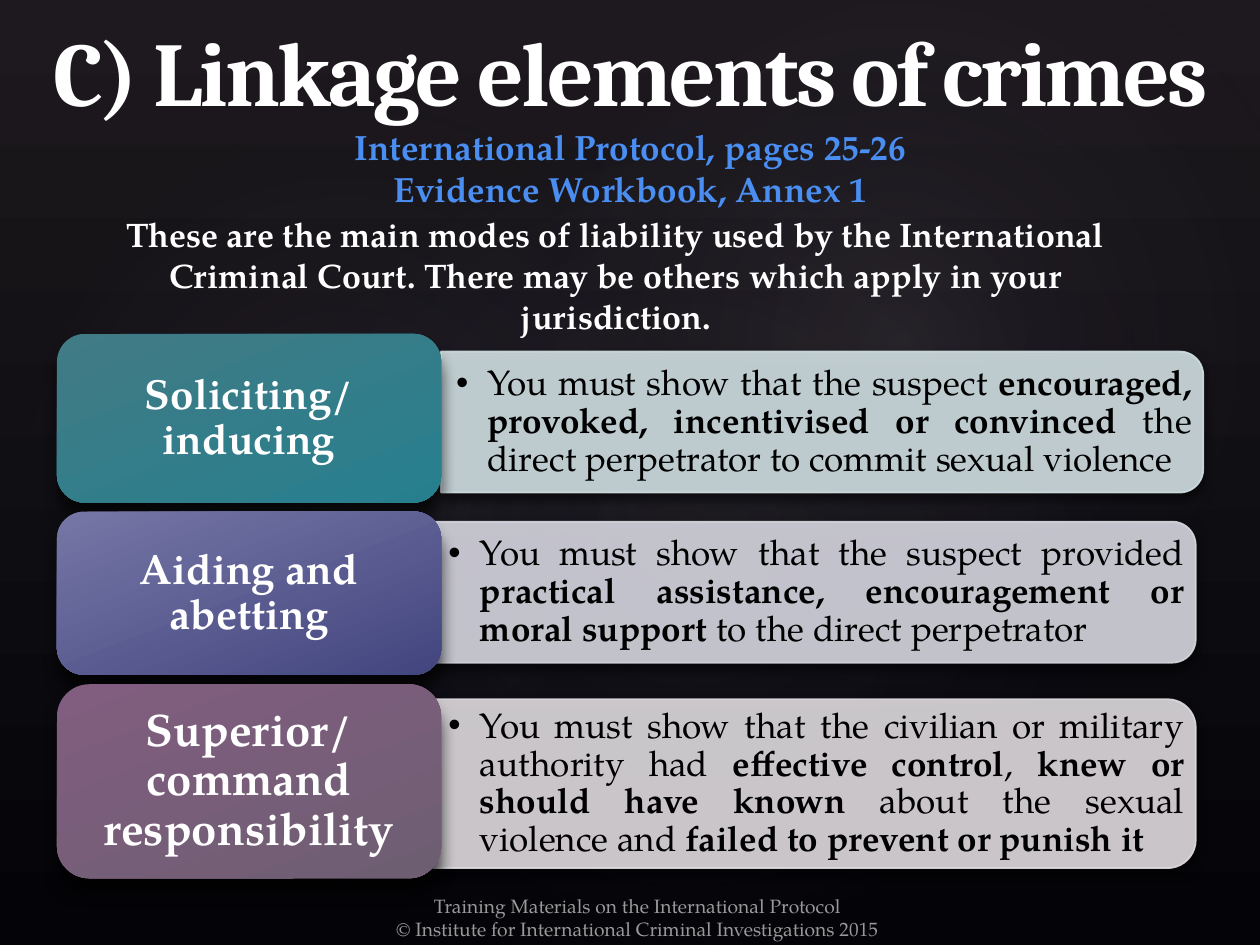
from math import cos, pi, sin

from lxml.etree import SubElement
from pptx import Presentation
from pptx.dml.color import RGBColor
from pptx.enum.shapes import MSO_SHAPE
from pptx.enum.text import MSO_ANCHOR, PP_ALIGN
from pptx.oxml.ns import qn
from pptx.util import Pt

OVAL, ROUNDED = MSO_SHAPE.OVAL, MSO_SHAPE.ROUNDED_RECTANGLE
CENTER, JUSTIFY = PP_ALIGN.CENTER, PP_ALIGN.JUSTIFY
MIDDLE, BOTTOM = MSO_ANCHOR.MIDDLE, MSO_ANCHOR.BOTTOM
BODY_FONT, TITLE_FONT = "TeX Gyre Pagella", "Cambria"
rgb = RGBColor.from_string


def add_run(p, text, size, color, bold=False, font=BODY_FONT):
    r = p.add_run()
    r.text = text
    r.font.size, r.font.bold, r.font.name = Pt(size), bold, font
    r.font.color.rgb = rgb(color)
    return r


def add_shadow(sp, blur, dist, alpha):
    sp.shadow.inherit = False
    effects = sp._element.spPr.find(qn("a:effectLst"))
    shadow = SubElement(effects, qn("a:outerShdw"), blurRad=str(Pt(blur)),
                        dist=str(Pt(dist)), dir="5400000", rotWithShape="0")
    color = SubElement(shadow, qn("a:srgbClr"), val="000000")
    SubElement(color, qn("a:alpha"), val=str(alpha * 1000))


prs = Presentation()
prs.slide_width, prs.slide_height = Pt(720), Pt(540)
s = prs.slides.add_slide(prs.slide_layouts[6])

# Background gradient
bg = s.background.fill
bg.gradient()
bg.gradient_angle = 270
for stop, color in zip(bg.gradient_stops, ("1D191E", "040408")):
    stop.color.rgb = rgb(color)

# Faint background glows
for x, y, w, h, angle, alpha in [(108, 82, 570, 449, 328.7, 7),
                                 (-21.6, 92, 436, 353, 294.3, 8),
                                 (258, 9.4, 510, 374, 328.7, 8)]:
    sp = s.shapes.add_shape(OVAL, Pt(x), Pt(y), Pt(w), Pt(h))
    sp.rotation = angle
    sp.shadow.inherit = False
    sp.line.fill.background()
    sp.fill.gradient()
    stops = sp.fill.gradient_stops
    stops[1].position = 0.58
    for stop, color in zip(stops, ("C4BCC6", "242852")):
        stop.color.rgb = rgb(color)
    grad = sp._element.spPr.find(qn("a:gradFill"))
    for color, opacity in zip(grad.iter(qn("a:srgbClr")), (alpha, 0)):
        SubElement(color, qn("a:alpha"), val=str(opacity * 1000))
    grad.remove(grad.find(qn("a:lin")))
    radial = SubElement(grad, qn("a:path"))
    radial.set("path", "circle")
    SubElement(radial, qn("a:fillToRect"), l="50000", t="50000", r="50000", b="50000")

# Introductory sentence
sp = s.shapes.add_textbox(Pt(32.4), Pt(111.6), Pt(639.4), Pt(82.8))
tf = sp.text_frame
tf.word_wrap, tf.vertical_anchor = True, MIDDLE
tf.margin_left = tf.margin_right = Pt(14)
tf.margin_top, tf.margin_bottom = Pt(8), 0
p = tf.paragraphs[0]
p.alignment = CENTER
add_run(p, "These are the main modes of liability used by the International Criminal "
           "Court. There may be others which apply in your jurisdiction.",
        19.4, "FFFFFF", True)

# Footer
sp = s.shapes.add_textbox(Pt(184.3), Pt(507.6), Pt(360), Pt(28.8))
tf = sp.text_frame
tf.word_wrap = True
tf.text = ("Training Materials on the International Protocol\n"
           "© Institute for International Criminal Investigations 2015")
for p in tf.paragraphs:
    p.alignment = CENTER
    font = p.runs[0].font
    font.size, font.name = Pt(11), BODY_FONT
    font.color.rgb = rgb("999999")

# Rows: label, its size, top, height and gradient;
# panel left, top, height and colour; text with every second piece bold
rows = [
    ("Soliciting/ inducing", 24, 190.8, 96.5, ("417B85", "277F8E"),
     252, 200.9, 80.6, "D2E0E3",
     ["You must show that the suspect ",
      "encouraged, provoked, incentivised or convinced",
      " the direct perpetrator to commit sexual violence"]),
    ("Aiding and abetting", 24, 292.3, 93.3, ("7677A6", "43457F"),
     247.7, 298.1, 80.6, "D7D7E1",
     ["You must show that the suspect provided ",
      "practical assistance, encouragement or moral support",
      " to the direct perpetrator"]),
    ("Superior/ command responsibility", 26, 391, 110.9, ("815D7F", "6E5E72"),
     247.7, 399.6, 96.5, "DFDBDF",
     ["You must show that the civilian or military authority had ",
      "effective control", ", ", "knew or should have known",
      " about the sexual violence and ", "failed to prevent or punish it"]),
]
LABEL_X, LABEL_W, PANEL_W, STEPS = 32.5, 219.6, 435.6, 10

for label, size, y, h, colors, px, py, ph, panel_color, pieces in rows:
    # Panel with rounded right corners
    radius = ph / 6
    right, bottom = px + PANEL_W, py + ph
    points = []
    for cy, start in ((py + radius, -pi / 2), (bottom - radius, 0)):
        for i in range(STEPS + 1):
            a = start + i * pi / 2 / STEPS
            points.append((Pt(right - radius + radius * cos(a)),
                           Pt(cy + radius * sin(a))))
    points.append((Pt(px), Pt(bottom)))
    outline = s.shapes.build_freeform(Pt(px), Pt(py))
    outline.add_line_segments(points, close=True)
    sp = outline.convert_to_shape()
    for fill in (sp.fill, sp.line.fill):
        fill.solid()
        fill.fore_color.rgb = rgb(panel_color)
    sp.line.width = Pt(1)
    for color in sp._element.spPr.iter(qn("a:srgbClr")):
        SubElement(color, qn("a:alpha"), val="90000")
    add_shadow(sp, 6, 3, 60)

    # Bulleted text
    tf = sp.text_frame
    tf.word_wrap, tf.vertical_anchor = True, MIDDLE
    tf.margin_left, tf.margin_right = Pt(8.6), Pt(6.5)
    tf.margin_top = tf.margin_bottom = Pt(0)
    p = tf.paragraphs[0]
    p.alignment, p.line_spacing = JUSTIFY, 0.9
    for i, piece in enumerate(pieces):
        add_run(p, piece, 20, "000000", i % 2 == 1)
    pPr = p._p.get_or_add_pPr()
    pPr.set("marL", str(Pt(18)))
    pPr.set("indent", str(-Pt(18)))
    SubElement(pPr, qn("a:buFont"), typeface="Arial")
    SubElement(pPr, qn("a:buChar"), char="•")

    # Label
    sp = s.shapes.add_shape(ROUNDED, Pt(LABEL_X), Pt(y), Pt(LABEL_W), Pt(h))
    sp.line.fill.background()
    sp.fill.gradient()
    sp.fill.gradient_angle = 291
    for stop, color in zip(sp.fill.gradient_stops, colors):
        stop.color.rgb = rgb(color)
    add_shadow(sp, 9, 9, 70)
    tf = sp.text_frame
    tf.word_wrap, tf.vertical_anchor = True, MIDDLE
    tf.margin_left = tf.margin_right = Pt(8)
    p = tf.paragraphs[0]
    p.alignment, p.line_spacing = CENTER, 0.9
    add_run(p, label, size, "FFFFFF", True)

# Title and references
sp = s.shapes.add_textbox(Pt(14.4), Pt(20.9), Pt(691.9), Pt(102.2))
tf = sp.text_frame
tf.word_wrap, tf.vertical_anchor = True, BOTTOM
p = tf.paragraphs[0]
p.alignment = CENTER
r = add_run(p, "C) Linkage elements of crimes", 52, "FFFFFF", True, TITLE_FONT)
r.font._element.set("spc", "-150")
for line in ("International Protocol, pages 25-26", "Evidence Workbook, Annex 1"):
    p.add_line_break()
    add_run(p, line, 20, "4A8EF2", True)

prs.save("out.pptx")
